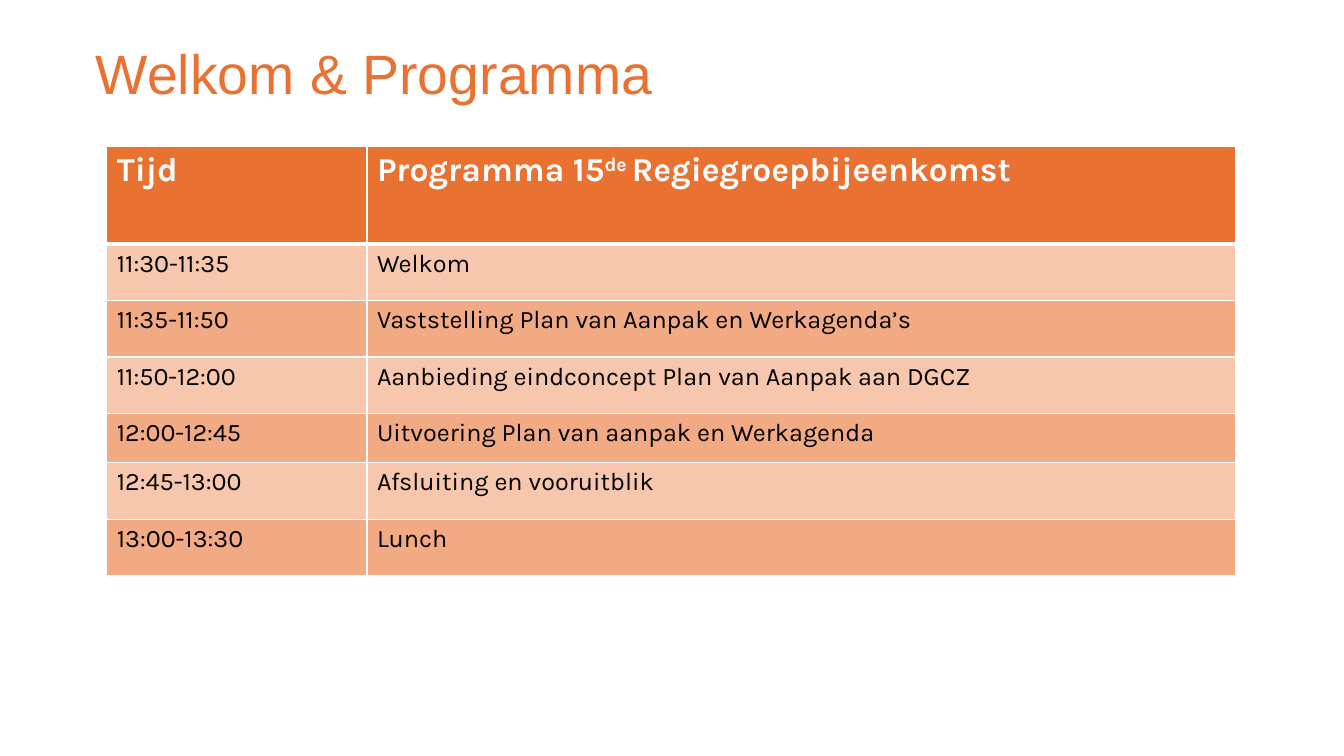
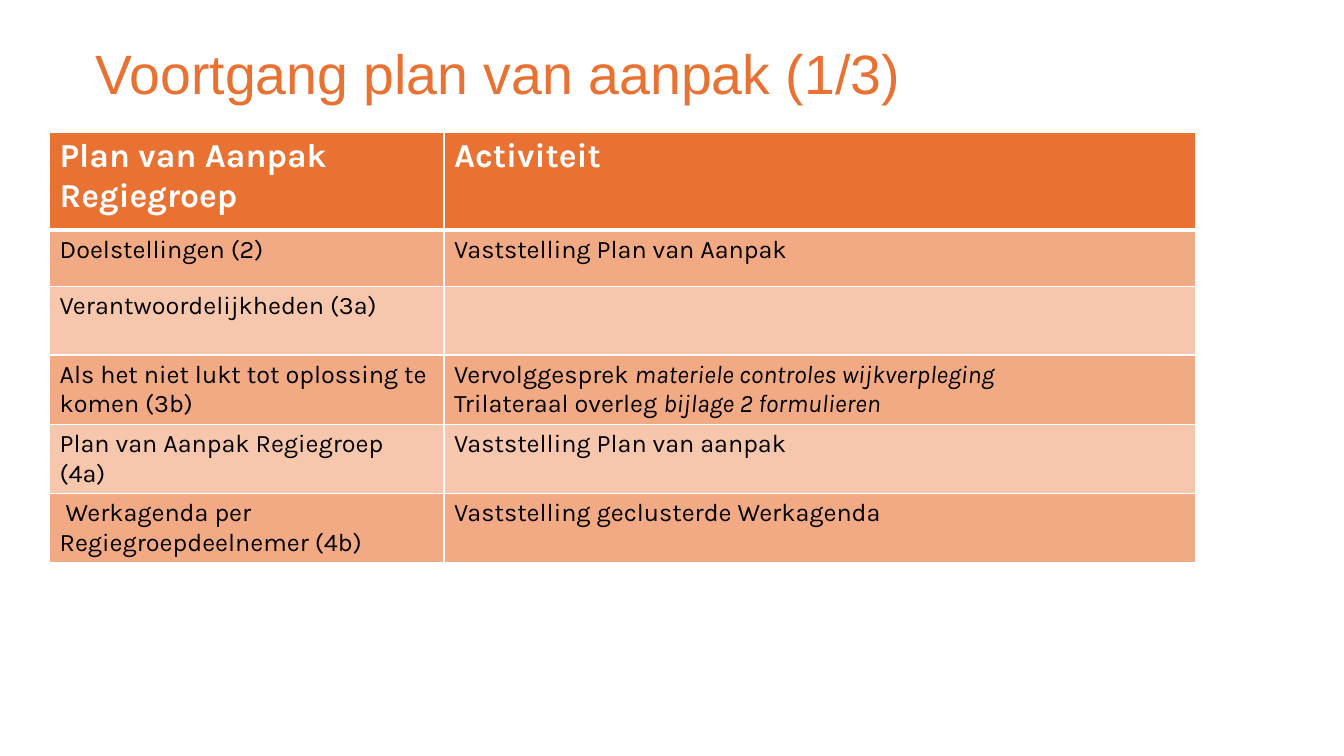
"""Build the programme and progress slides of the steering group meeting."""
from dataclasses import dataclass, field
from typing import Any

import pptx
import pptx.dml.color
import pptx.enum.text
import pptx.oxml
import pptx.oxml.ns
import pptx.util

Pt = pptx.util.Pt
RGB = pptx.dml.color.RGBColor.from_string


@dataclass(frozen=True)
class Theme:
    orange: str = "E97132"
    light: str = "F6C6AD"
    dark: str = "F2AA84"
    white: str = "FFFFFF"
    black: str = "000000"
    title_font: str = "Arial"
    table_font: str = "Karla"
    title_size: float = 39.6
    header_size: float = 24
    body_size: float = 18
    rule: float = 1
    header_rule: float = 3


THEME = Theme()


@dataclass(frozen=True)
class Span:
    text: str
    format: dict[str, Any] = field(default_factory=dict)
    baseline: int = 0


Line = tuple[Span, ...]
Content = str | tuple[Line, ...]


@dataclass(frozen=True)
class Schedule:
    title: str
    left: float
    top: float
    columns: tuple[float, ...]
    heights: tuple[float, ...]
    bands: tuple[str, str]
    rows: tuple[tuple[Content, ...], ...]


def apply_format(target: Any, values: dict[str, Any]) -> None:
    for attribute, value in values.items():
        setattr(target, attribute, value)


def style_font(font: Any, color: str, values: dict[str, Any]) -> None:
    apply_format(font, values)
    font.color.rgb = RGB(color)


def add_title(slide: Any, text: str) -> None:
    heading = slide.shapes.title
    apply_format(heading, {"left": Pt(61.2), "top": Pt(28), "width": Pt(677), "height": Pt(54)})
    apply_format(heading.text_frame, {
        "text": text,
        "word_wrap": True,
        "auto_size": pptx.enum.text.MSO_AUTO_SIZE.NONE,
        "vertical_anchor": pptx.enum.text.MSO_ANCHOR.MIDDLE,
    })
    line = heading.text_frame.paragraphs[0]
    apply_format(line, {"alignment": pptx.enum.text.PP_ALIGN.LEFT, "line_spacing": 0.9})
    style_font(line.runs[0].font, THEME.orange,
               {"name": THEME.title_font, "size": Pt(THEME.title_size)})


def add_borders(cell: Any, top: float, bottom: float) -> None:
    properties = cell._tc.get_or_add_tcPr()
    widths = {"lnL": THEME.rule, "lnR": THEME.rule, "lnT": top, "lnB": bottom}
    for side, width in widths.items():
        properties.append(pptx.oxml.parse_xml(
            f'<a:{side} {pptx.oxml.ns.nsdecls("a")} w="{Pt(width)}"><a:solidFill>'
            f'<a:srgbClr val="{THEME.white}"/></a:solidFill></a:{side}>'))


def write_cell(cell: Any, content: Content, header: bool) -> None:
    lines = ((Span(content),),) if isinstance(content, str) else content
    size = THEME.header_size if header else THEME.body_size
    base = {"name": THEME.table_font, "size": Pt(size), "bold": header}
    color = THEME.white if header else THEME.black
    for index, spans in enumerate(lines):
        frame = cell.text_frame
        paragraph = frame.add_paragraph() if index else frame.paragraphs[0]
        style_font(paragraph.font, color, base)
        for span in filter(lambda part: part.text, spans):
            run = paragraph.add_run()
            run.text = span.text
            style_font(run.font, color, base | span.format)
            if span.baseline:
                run._r.get_or_add_rPr().set("baseline", str(span.baseline * 1000))


def add_schedule(slide: Any, schedule: Schedule) -> None:
    table = slide.shapes.add_table(
        len(schedule.rows), len(schedule.columns), Pt(schedule.left), Pt(schedule.top),
        Pt(sum(schedule.columns)), Pt(sum(schedule.heights))).table
    table.horz_banding = False
    for column, width in zip(table.columns, schedule.columns):
        column.width = Pt(width)
    for index, (row, height, contents) in enumerate(
            zip(table.rows, schedule.heights, schedule.rows)):
        row.height = Pt(height)
        header = index == 0
        top = THEME.header_rule if index == 1 else THEME.rule
        bottom = THEME.header_rule if header else THEME.rule
        fill = THEME.orange if header else schedule.bands[(index - 1) % 2]
        for cell, content in zip(row.cells, contents):
            add_borders(cell, top, bottom)
            cell.fill.solid()
            cell.fill.fore_color.rgb = RGB(fill)
            write_cell(cell, content, header)


ITALIC = {"italic": True}

SCHEDULES = (
    Schedule(
        "Welkom & Programma", 76.3, 104.4, (185.8, 620.8),
        (69.8, 40.4, 40.4, 40.4, 35.2, 40.4, 40.4), (THEME.light, THEME.dark),
        (
            ("Tijd", ((Span("Programma 15"), Span("de ", baseline=30),
                       Span("Regiegroepbijeenkomst")),)),
            ("11:30-11:35", "Welkom"),
            ("11:35-11:50", "Vaststelling Plan van Aanpak en Werkagenda’s"),
            ("11:50-12:00", "Aanbieding eindconcept Plan van Aanpak aan DGCZ"),
            ("12:00-12:45", "Uitvoering Plan van aanpak en Werkagenda"),
            ("12:45-13:00", "Afsluiting en vooruitblik"),
            ("13:00-13:30", "Lunch"),
        )),
    Schedule(
        "Voortgang plan van aanpak (1/3)", 35.4, 94.4, (281.8, 537),
        (69.8, 40.4, 49, 40.4, 40.4, 40.4), (THEME.dark, THEME.light),
        (
            ("Plan van Aanpak Regiegroep", "Activiteit"),
            ("Doelstellingen (2)", "Vaststelling Plan van Aanpak"),
            ("Verantwoordelijkheden (3a)", ""),
            ("Als het niet lukt tot oplossing te komen (3b)", (
                (Span("Vervolggesprek "), Span("materiele controles wijkverpleging", ITALIC)),
                (Span("Trilateraal overleg "), Span("bijlage 2 formulieren", ITALIC)))),
            ("Plan van Aanpak Regiegroep (4a)", "Vaststelling Plan van aanpak"),
            (" Werkagenda per Regiegroepdeelnemer (4b)", "Vaststelling geclusterde Werkagenda"),
        )),
)


def main() -> None:
    deck = pptx.Presentation()
    apply_format(deck, {"slide_width": Pt(960), "slide_height": Pt(540)})
    for schedule in SCHEDULES:
        slide = deck.slides.add_slide(deck.slide_layouts.get_by_name("Title Only"))
        add_schedule(slide, schedule)
        add_title(slide, schedule.title)
    deck.save("out.pptx")


if __name__ == "__main__":
    main()
